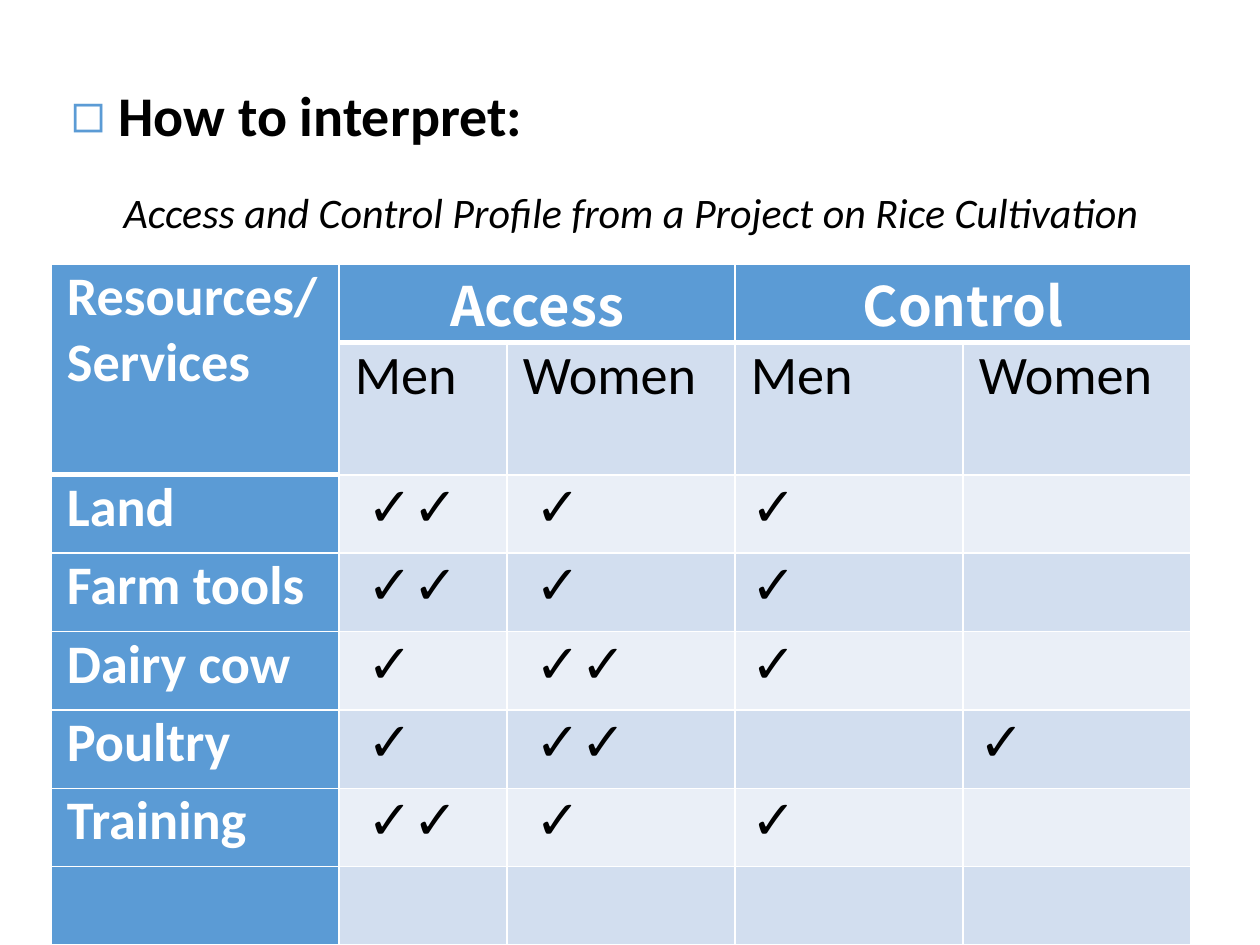
from dataclasses import dataclass

import pptx
import pptx.dml.color
import pptx.enum.text
import pptx.oxml.ns
import pptx.util
from lxml import etree

EMU_PER_PX = 914400 / 126
COLORS = {"header": "5B9BD5", "band_dark": "D2DEEF", "band_light": "EAEFF7",
          "black": "000000", "white": "FFFFFF"}
BODY_FONT = "Calibri"
GROUP_FONT = "Noto Sans CJK JP"
TABLE_SIZE = 31
COLUMN_WIDTHS = [288, 168, 228, 228, 228]
ROW_HEIGHT = 66
ALIGN = pptx.enum.text.PP_ALIGN
qn = pptx.oxml.ns.qn


@dataclass
class Box:
    left: int
    top: int
    width: int
    height: int


@dataclass
class TextStyle:
    size: int
    color: str = "black"
    font: str = BODY_FONT
    bold: bool = False
    italic: bool = False


@dataclass
class Resource:
    name: str = ""
    marks: tuple[str, str, str, str] = ("", "", "", "")


RESOURCES = [
    Resource("Land", (" ✓✓", " ✓", "✓", "")),
    Resource("Farm tools", (" ✓✓", " ✓", "✓", "")),
    Resource("Dairy cow", (" ✓", " ✓✓", "✓", "")),
    Resource("Poultry", (" ✓", " ✓✓", "", "✓")),
    Resource("Training", (" ✓✓", " ✓", "✓", "")),
    Resource(), Resource(), Resource(),
]


def px(length: int) -> pptx.util.Emu:
    return pptx.util.Emu(round(length * EMU_PER_PX))


def rgb(name: str) -> pptx.dml.color.RGBColor:
    return pptx.dml.color.RGBColor.from_string(COLORS[name])


def add_run(paragraph, text: str, style: TextStyle) -> None:
    run = paragraph.add_run()
    run.text = text
    run.font.size = pptx.util.Pt(style.size)
    run.font.name = style.font
    run.font.bold = style.bold
    run.font.italic = style.italic
    run.font.color.rgb = rgb(style.color)


def place(placeholder, box: Box):
    """Move a placeholder and return its first paragraph, set from the top left."""
    placeholder.left, placeholder.top = px(box.left), px(box.top)
    placeholder.width, placeholder.height = px(box.width), px(box.height)
    frame = placeholder.text_frame
    frame.word_wrap = True
    frame.auto_size = pptx.enum.text.MSO_AUTO_SIZE.NONE
    frame.vertical_anchor = pptx.enum.text.MSO_ANCHOR.TOP
    paragraph = frame.paragraphs[0]
    paragraph.alignment = ALIGN.LEFT
    return paragraph


def set_indent(paragraph, margin: int, indent: int) -> None:
    properties = paragraph._p.get_or_add_pPr()
    properties.set("marL", str(px(margin)))
    properties.set("indent", str(px(indent)))


def add_bullet(paragraph, symbol: str, color: str) -> None:
    properties = paragraph._p.get_or_add_pPr()
    bullet_color = etree.SubElement(properties, qn("a:buClr"))
    etree.SubElement(bullet_color, qn("a:srgbClr"), val=COLORS[color])
    etree.SubElement(properties, qn("a:buChar"), char=symbol)


def set_borders(cell, bottom_width: int) -> None:
    """Draw white cell borders; the fill must be set afterwards."""
    properties = cell._tc.get_or_add_tcPr()
    for side, width in (("L", 1), ("R", 1), ("T", 1), ("B", bottom_width)):
        line = etree.SubElement(properties, qn(f"a:ln{side}"), w=str(pptx.util.Pt(width)))
        fill = etree.SubElement(line, qn("a:solidFill"))
        etree.SubElement(fill, qn("a:srgbClr"), val=COLORS["white"])


def fill_cell(cell, text: str, fill: str, style: TextStyle,
              align=ALIGN.JUSTIFY, bottom_width: int = 1) -> None:
    set_borders(cell, bottom_width)
    cell.fill.solid()
    cell.fill.fore_color.rgb = rgb(fill)
    cell.margin_left = cell.margin_right = px(16)
    cell.margin_top = cell.margin_bottom = 0
    paragraph = cell.text_frame.paragraphs[0]
    paragraph.alignment = align
    if text:
        add_run(paragraph, text, style)
    else:
        # An empty cell keeps the line height of the group headings.
        end = etree.SubElement(paragraph._p, qn("a:endParaRPr"), sz=str(style.size * 100))
        etree.SubElement(end, qn("a:latin"), typeface=GROUP_FONT)


def add_profile_table(slide, box: Box) -> None:
    table = slide.shapes.add_table(
        len(RESOURCES) + 2, len(COLUMN_WIDTHS),
        px(box.left), px(box.top), px(box.width), px(box.height)).table
    table.horz_banding = False
    for column, width in zip(table.columns, COLUMN_WIDTHS):
        column.width = px(width)
    for row in table.rows:
        row.height = px(ROW_HEIGHT)

    label = TextStyle(TABLE_SIZE, "white", bold=True)
    group = TextStyle(TABLE_SIZE, "white", GROUP_FONT, bold=True)
    plain = TextStyle(TABLE_SIZE)

    table.cell(0, 0).merge(table.cell(1, 0))
    fill_cell(table.cell(0, 0), "Resources/Services", "header", label, bottom_width=3)
    for first, heading in ((1, "Access"), (3, "Control")):
        table.cell(0, first).merge(table.cell(0, first + 1))
        fill_cell(table.cell(0, first), heading, "header", group, ALIGN.CENTER, 3)
        for offset, gender in enumerate(("Men", "Women")):
            fill_cell(table.cell(1, first + offset), gender, "band_dark", plain)

    for row, resource in enumerate(RESOURCES, start=2):
        band = "band_dark" if row % 2 else "band_light"
        fill_cell(table.cell(row, 0), resource.name, "header", label)
        for column, mark in enumerate(resource.marks, start=1):
            fill_cell(table.cell(row, column), mark, band, plain)


def main() -> None:
    presentation = pptx.Presentation()
    presentation.slide_width, presentation.slide_height = px(1260), px(945)
    slide = presentation.slides.add_slide(presentation.slide_layouts[1])

    caption = place(slide.shapes.title, Box(100, 180, 1075, 74))
    set_indent(caption, 11, 0)
    caption.space_before = pptx.util.Pt(6)
    add_run(caption, "Access and Control Profile from a Project on Rice Cultivation",
            TextStyle(24, italic=True))

    body = slide.placeholders[1]
    heading = place(body, Box(71, 82, 1033, 73))
    body.text_frame.margin_left = body.text_frame.margin_right = 0
    set_indent(heading, 13, -13)
    heading.line_spacing = 0.9
    heading.space_before = pptx.util.Pt(12)
    heading.space_after = pptx.util.Pt(2)
    add_bullet(heading, "◻", "header")
    add_run(heading, " How to interpret:", TextStyle(32, bold=True))

    add_profile_table(slide, Box(51, 264, sum(COLUMN_WIDTHS),
                                 ROW_HEIGHT * (len(RESOURCES) + 2)))
    presentation.save("out.pptx")


if __name__ == "__main__":
    main()
